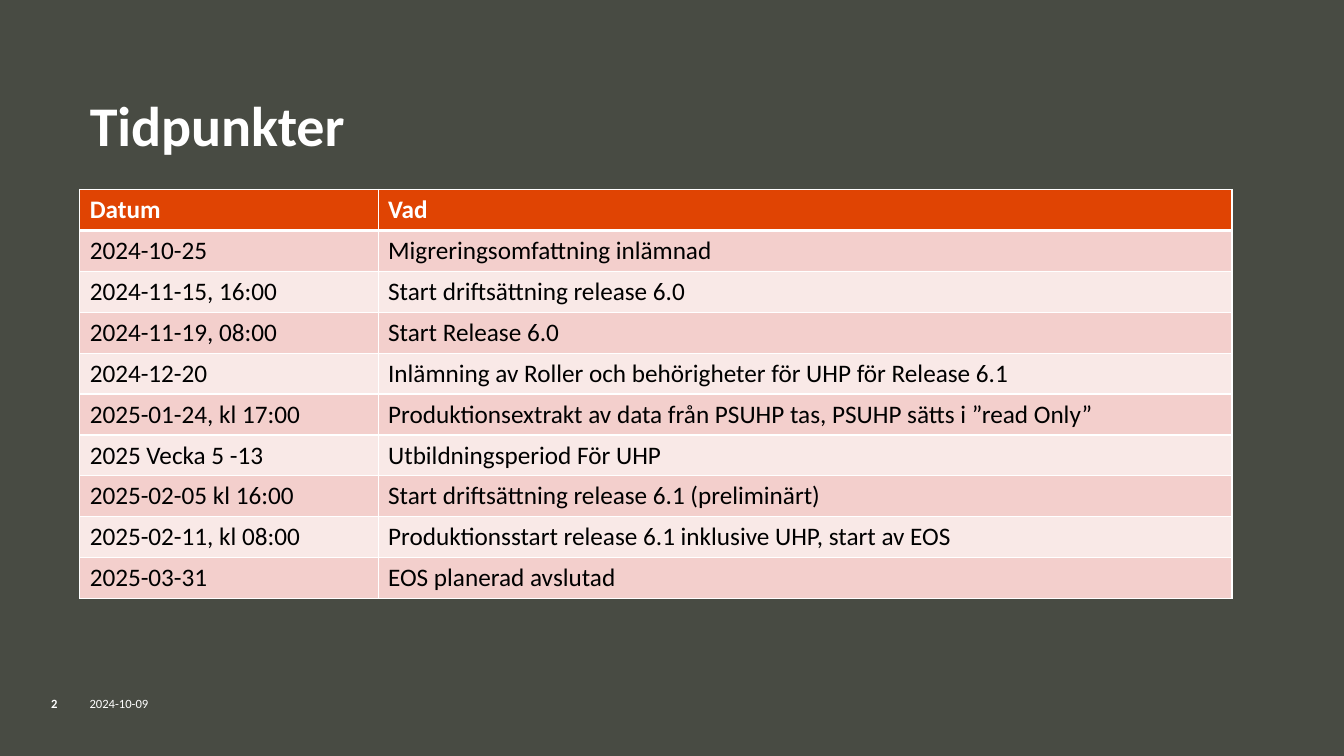
from lxml import etree
from pptx import Presentation
from pptx.dml.color import RGBColor
from pptx.enum.text import MSO_ANCHOR, PP_ALIGN
from pptx.oxml.ns import qn
from pptx.util import Inches, Pt

# Content
TITLE = "Tidpunkter"
HEADER = ("Datum", "Vad")
MILESTONES = [
    ("2024-10-25", "Migreringsomfattning inlämnad"),
    ("2024-11-15, 16:00", "Start driftsättning release 6.0"),
    ("2024-11-19, 08:00", "Start Release 6.0"),
    ("2024-12-20", "Inlämning av Roller och behörigheter för UHP för Release 6.1"),
    ("2025-01-24, kl 17:00",
     "Produktionsextrakt av data från PSUHP tas, PSUHP sätts i ”read Only”"),
    ("2025 Vecka 5 -13", "Utbildningsperiod För UHP"),
    ("2025-02-05 kl 16:00", "Start driftsättning release 6.1 (preliminärt)"),
    ("2025-02-11, kl 08:00", "Produktionsstart release 6.1 inklusive UHP, start av EOS"),
    ("2025-03-31", "EOS planerad avslutad"),
]
# Footer: text, left, width, alignment, bold
FOOTER = [
    ("2024-10-09", 0.79, 3.94, PP_ALIGN.LEFT, False),
    ("2", 0.33, 0.42, PP_ALIGN.CENTER, True),
]

# Look
FONT = "Calibri"
WHITE = RGBColor(0xFF, 0xFF, 0xFF)
BLACK = RGBColor(0x00, 0x00, 0x00)
BACKGROUND = RGBColor(0x48, 0x4B, 0x43)
ORANGE = RGBColor(0xE0, 0x44, 0x03)
BANDS = (RGBColor(0xF3, 0xCF, 0xCC), RGBColor(0xF9, 0xE9, 0xE7))
MIDDLE = MSO_ANCHOR.MIDDLE

# Layout
LEFT, WIDTH = Inches(0.79), Inches(11.43)
DATE_WIDTH = Inches(2.96)


def style(paragraph, size, color, bold=False):
    for run in paragraph.runs:
        run.font.name = FONT
        run.font.size = Pt(size)
        run.font.bold = bold
        run.font.color.rgb = color


def add_borders(cell, widths):
    """Draw white cell borders; widths maps each side to points."""
    properties = cell._tc.get_or_add_tcPr()
    for position, (side, width) in enumerate(widths.items()):
        line = etree.Element(qn(f"a:ln{side}"), w=str(Pt(width)))
        fill = etree.SubElement(line, qn("a:solidFill"))
        etree.SubElement(fill, qn("a:srgbClr"), val=str(WHITE))
        properties.insert(position, line)


def main():
    prs = Presentation()
    prs.slide_width, prs.slide_height = Inches(13.33), Inches(7.5)
    slide = prs.slides.add_slide(prs.slide_layouts[5])
    slide.background.fill.solid()
    slide.background.fill.fore_color.rgb = BACKGROUND

    # Title
    title = slide.shapes.title
    title.left, title.top = LEFT, Inches(0.79)
    title.width, title.height = WIDTH, Inches(0.96)
    title.text_frame.text = TITLE
    title.text_frame.vertical_anchor = MIDDLE
    heading = title.text_frame.paragraphs[0]
    heading.alignment = PP_ALIGN.LEFT
    heading.line_spacing = 0.9
    style(heading, 40, WHITE, True)

    # Schedule table
    rows = [HEADER] + MILESTONES
    schedule = slide.shapes.add_table(
        len(rows), len(HEADER), LEFT, Inches(1.88), WIDTH, Inches(4.06)).table
    schedule.columns[0].width = DATE_WIDTH
    schedule.columns[1].width = WIDTH - DATE_WIDTH
    for r, row in enumerate(rows):
        is_header = r == 0
        for c, text in enumerate(row):
            cell = schedule.cell(r, c)
            cell.text_frame.text = text
            style(cell.text_frame.paragraphs[0], 18,
                  WHITE if is_header else BLACK, is_header)
            cell.fill.solid()
            cell.fill.fore_color.rgb = ORANGE if is_header else BANDS[(r - 1) % 2]
            add_borders(cell, {"L": 1, "R": 1, "T": 3 if r == 1 else 1,
                               "B": 3 if is_header else 1})

    # Footer
    for text, left, width, alignment, bold in FOOTER:
        box = slide.shapes.add_textbox(
            Inches(left), Inches(6.9), Inches(width), Inches(0.15))
        frame = box.text_frame
        frame.word_wrap = True
        frame.margin_top = frame.margin_bottom = 0
        frame.vertical_anchor = MIDDLE
        frame.text = text
        frame.paragraphs[0].alignment = alignment
        style(frame.paragraphs[0], 9, WHITE, bold)

    prs.save("out.pptx")


if __name__ == "__main__":
    main()
